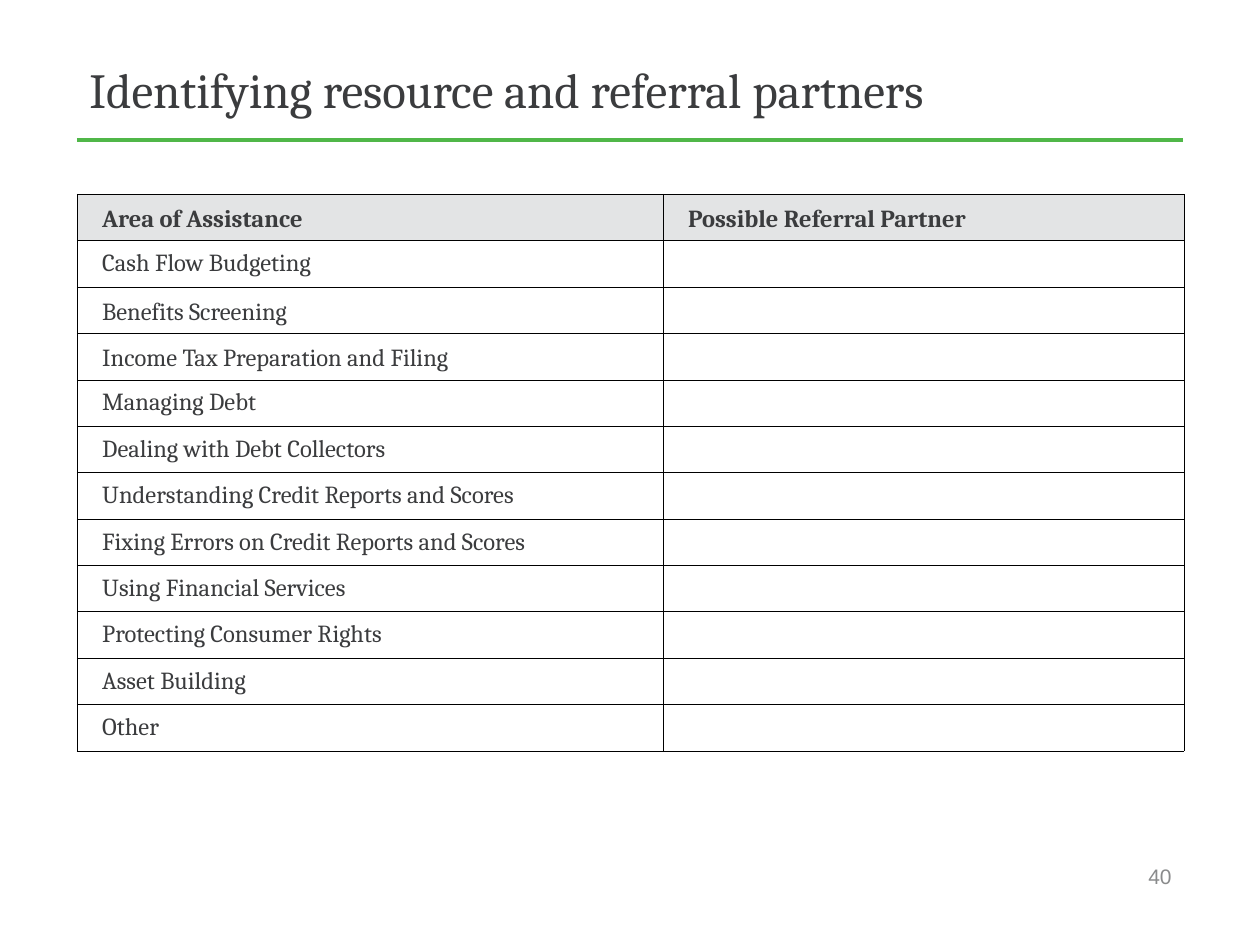
from lxml import etree
from pptx import Presentation, util as u
from pptx.dml.color import RGBColor
from pptx.enum import shapes, text
from pptx.oxml import ns

PX_PER_INCH = 126
HEADINGS = ("Area of Assistance", "Possible Referral Partner")
AREAS = (
    "Cash Flow Budgeting",
    "Benefits Screening",
    "Income Tax Preparation and Filing",
    "Managing Debt",
    "Dealing with Debt Collectors",
    "Understanding Credit Reports and Scores",
    "Fixing Errors on Credit Reports and Scores",
    "Using Financial Services",
    "Protecting Consumer Rights",
    "Asset Building",
    "Other",
)
LOOSE_AREAS = ("Benefits Screening", "Income Tax Preparation and Filing")


def px(length):
    return u.Emu(round(length * 914400 / PX_PER_INCH))


def color(value):
    return RGBColor.from_string(value)


def write(frame, words, size=14, font="Cambria", ink="3B3C3E", bold=False,
          align=text.PP_ALIGN.LEFT, spacing=None):
    paragraph = frame.paragraphs[0]
    paragraph.alignment = align
    paragraph.line_spacing = spacing
    run = paragraph.add_run()
    run.text = words
    run.font.size = u.Pt(size)
    run.font.name = font
    run.font.bold = bold
    run.font.color.rgb = color(ink)


class SlideBuilder:
    green = "50B748"
    header_fill = "E3E4E5"
    border = "000000"
    muted = "8A8B8C"

    def __init__(self, slide):
        self.slide = slide

    def rule(self, left, right, y):
        line = self.slide.shapes.add_connector(
            shapes.MSO_CONNECTOR.STRAIGHT, px(left), px(y), px(right), px(y))
        line.line.color.rgb = color(self.green)
        line.line.width = u.Pt(2)
        etree.SubElement(line._element.spPr, ns.qn("a:effectLst"))

    def label(self, words, left, top, width, height, **style):
        box = self.slide.shapes.add_textbox(px(left), px(top), px(width), px(height))
        frame = box.text_frame
        frame.word_wrap = True
        frame.vertical_anchor = text.MSO_ANCHOR.MIDDLE
        write(frame, words, **style)

    def outline(self, cell):
        properties = cell._tc.get_or_add_tcPr()
        for index, side in enumerate(("lnL", "lnR", "lnT", "lnB")):
            edge = etree.Element(ns.qn(f"a:{side}"), w=str(u.Pt(0.25)))
            fill = etree.SubElement(edge, ns.qn("a:solidFill"))
            etree.SubElement(fill, ns.qn("a:srgbClr"), val=self.border)
            properties.insert(index, edge)

    def cell(self, cell, words, heading):
        cell.vertical_anchor = text.MSO_ANCHOR.MIDDLE
        if heading:
            cell.fill.solid()
            cell.fill.fore_color.rgb = color(self.header_fill)
        else:
            cell.fill.background()
        if words:
            cell.margin_left = u.Inches(0.2)
            loose = heading or words in LOOSE_AREAS
            write(cell.text_frame, words, bold=heading, spacing=1.15 if loose else None)
        else:
            cell.margin_top = cell.margin_bottom = 0
        self.outline(cell)

    def table(self, rows, left, top, widths, height):
        table = self.slide.shapes.add_table(
            len(rows), len(widths), px(left), px(top), px(sum(widths)), px(height)).table
        table.first_row = table.horz_banding = False
        for column, width in zip(table.columns, widths):
            column.width = px(width)
        for r, row in enumerate(rows):
            for c, words in enumerate(row):
                self.cell(table.cell(r, c), words, heading=r == 0)


def main():
    deck = Presentation()
    deck.slide_width, deck.slide_height = u.Inches(10), u.Inches(7.5)
    builder = SlideBuilder(deck.slides.add_slide(deck.slide_layouts[6]))
    builder.rule(77, 1183, 140)
    builder.label("Identifying resource and referral partners", 77, 38, 1107, 102, size=28)
    builder.label("40", 785, 851, 399, 50, size=12, font="Arial",
                  ink=builder.muted, align=text.PP_ALIGN.RIGHT)
    rows = [HEADINGS] + [(area, "") for area in AREAS]
    builder.table(rows, 77, 194, (586, 521), 557)
    deck.save("out.pptx")


if __name__ == "__main__":
    main()
